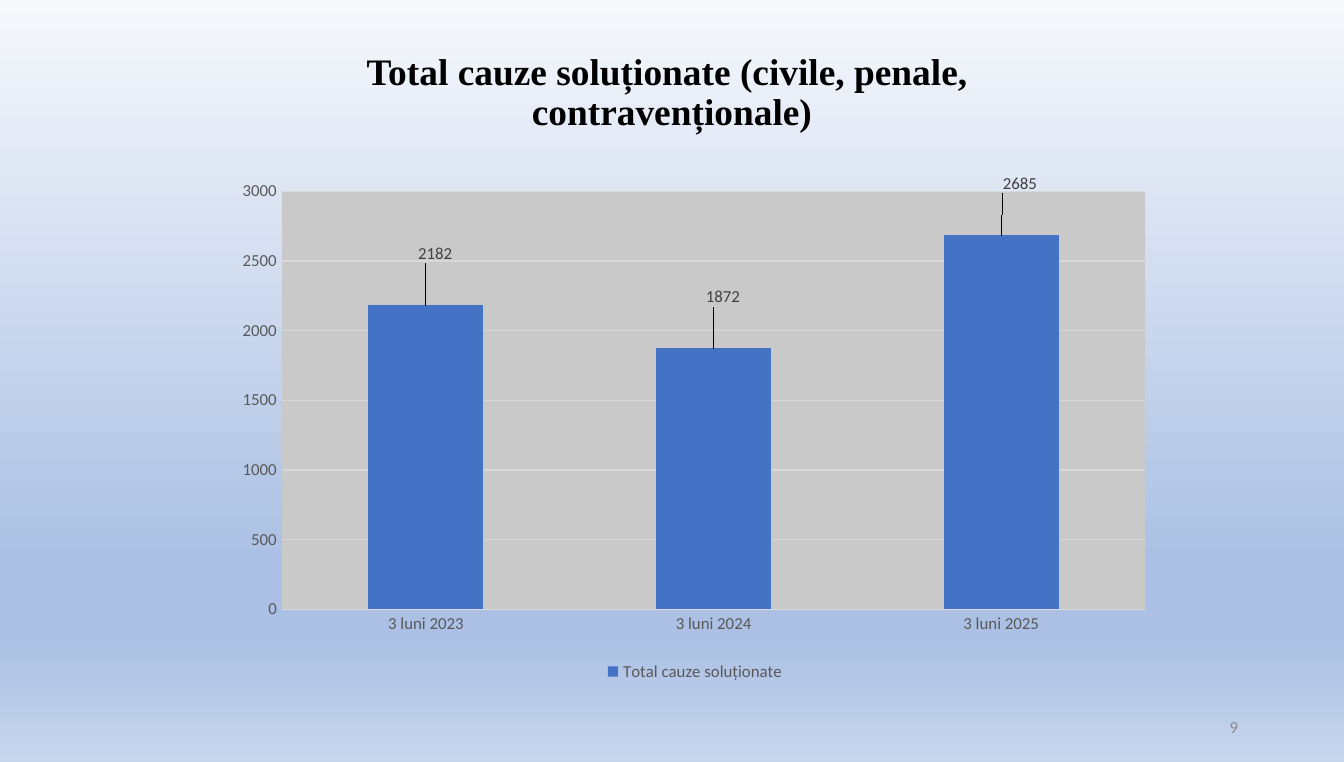
from dataclasses import dataclass

from lxml.etree import SubElement
from pptx import Presentation
from pptx.chart.data import CategoryChartData
from pptx.dml.color import RGBColor
from pptx.enum.chart import XL_CHART_TYPE, XL_LABEL_POSITION, XL_LEGEND_POSITION, XL_TICK_MARK
from pptx.enum.text import MSO_ANCHOR, PP_ALIGN
from pptx.oxml import parse_xml
from pptx.oxml.ns import nsdecls, qn
from pptx.util import Inches, Pt


@dataclass(frozen=True)
class Theme:
    heading_font: str = "Times New Roman"
    body_font: str = "Calibri"
    heading_size: int = 20
    body_size: int = 9
    heading: str = "000000"
    axis_text: str = "595959"
    label_text: str = "404040"
    page_text: str = "8C8C8C"
    bar: str = "4472C4"
    plot: str = "C9C9C9"
    grid: str = "D9D9D9"
    background: tuple = ((0, "F6F8FC"), (74, "ABC0E4"), (83, "ABC0E4"), (100, "C7D5ED"))


theme = Theme()


def style_font(font, color, name=theme.body_font, size=theme.body_size, bold=False):
    for attribute, value in {"name": name, "size": Pt(size), "bold": bold}.items():
        setattr(font, attribute, value)
    font.color.rgb = RGBColor.from_string(color)


def manual_layout(**values):
    """Return a c:layout element placed by fractions of the chart area."""
    entries = "".join(f'<c:{key} val="{value}"/>' for key, value in values.items())
    return parse_xml(f'<c:layout {nsdecls("c")}><c:manualLayout>{entries}</c:manualLayout></c:layout>')


deck = Presentation()
deck.slide_width, deck.slide_height = Inches(10), Inches(5.67)
slide = deck.slides.add_slide(deck.slide_layouts[6])

# Background gradient, top to bottom
backdrop = slide.background.fill
backdrop.gradient()
backdrop.gradient_angle = 270
stops = slide.background._cSld.find(".//" + qn("a:gsLst"))
for stop in list(stops):
    stops.remove(stop)
for percent, color in theme.background:
    stop = SubElement(stops, qn("a:gs"), pos=str(percent * 1000))
    SubElement(stop, qn("a:srgbClr"), val=color)

# Title and page number
texts = [
    ("Total cauze soluționate (civile, penale, \vcontravenționale)", (0.69, 0.3, 8.62, 1.1), 0.36,
     {"alignment": PP_ALIGN.CENTER, "line_spacing": 0.9},
     {"color": theme.heading, "name": theme.heading_font, "size": theme.heading_size, "bold": True}),
    ("9", (7.06, 5.26, 2.25, 0.3), 0.05, {"alignment": PP_ALIGN.RIGHT}, {"color": theme.page_text}),
]
for wording, place, bottom_margin, paragraph_format, font_format in texts:
    frame = slide.shapes.add_textbox(*map(Inches, place)).text_frame
    frame.word_wrap = True
    frame.vertical_anchor = MSO_ANCHOR.MIDDLE
    frame.margin_bottom = Inches(bottom_margin)
    paragraph = frame.paragraphs[0]
    paragraph.text = wording
    for attribute, value in paragraph_format.items():
        setattr(paragraph, attribute, value)
    for run in paragraph.runs:
        style_font(run.font, **font_format)

# Chart of solved cases
cases = CategoryChartData()
cases.categories = ["3 luni 2023", "3 luni 2024", "3 luni 2025"]
cases.add_series("Total cauze soluționate", (2182, 1872, 2685))
chart = slide.shapes.add_chart(
    XL_CHART_TYPE.COLUMN_CLUSTERED, *map(Inches, (1.68, 1.27, 6.98, 3.84)), cases).chart
chart.has_title = False
style_font(chart.font, theme.axis_text)
chart.has_legend = True
chart.legend.position = XL_LEGEND_POSITION.BOTTOM
chart.legend.include_in_layout = False
style_font(chart.legend.font, theme.axis_text)

for axis in (chart.category_axis, chart.value_axis):
    axis.major_tick_mark = axis.minor_tick_mark = XL_TICK_MARK.NONE
    axis.format.line.fill.background()
    style_font(axis.tick_labels.font, theme.axis_text)
chart.value_axis.minimum_scale = 0
chart.value_axis.maximum_scale = 3000
chart.value_axis.major_unit = 500
grid_line = chart.value_axis.major_gridlines.format.line
grid_line.width = Pt(0.75)
grid_line.color.rgb = RGBColor.from_string(theme.grid)

plot_area = chart._chartSpace.find(".//" + qn("c:plotArea"))
for automatic_layout in plot_area.findall(qn("c:layout")):
    plot_area.remove(automatic_layout)
plot_area.insert(0, manual_layout(layoutTarget="inner", xMode="edge", yMode="edge",
                                  x=0.06, y=0.04, w=0.92, h=0.81))
plot_area.append(parse_xml(
    f'<c:spPr {nsdecls("c", "a")}><a:solidFill><a:srgbClr val="{theme.plot}"/></a:solidFill></c:spPr>'))

columns = chart.plots[0]
columns.gap_width = 150
columns.vary_by_categories = False
solved = columns.series[0]
solved.format.fill.solid()
solved.format.fill.fore_color.rgb = RGBColor.from_string(theme.bar)
solved.data_labels.show_value = True
style_font(solved.data_labels.font, theme.label_text)

# Value labels float above their columns, nudged to the right
label_shifts = (0.01, 0.01, 0.02)
for index in range(len(label_shifts)):
    value_label = solved.points[index].data_label
    value_label.position = XL_LABEL_POSITION.OUTSIDE_END
    style_font(value_label.font, theme.label_text)
for shift, label_index in zip(label_shifts, solved._element.findall(".//" + qn("c:dLbl") + "/" + qn("c:idx"))):
    label_index.addnext(manual_layout(x=shift, y=-0.07))

deck.save("out.pptx")
